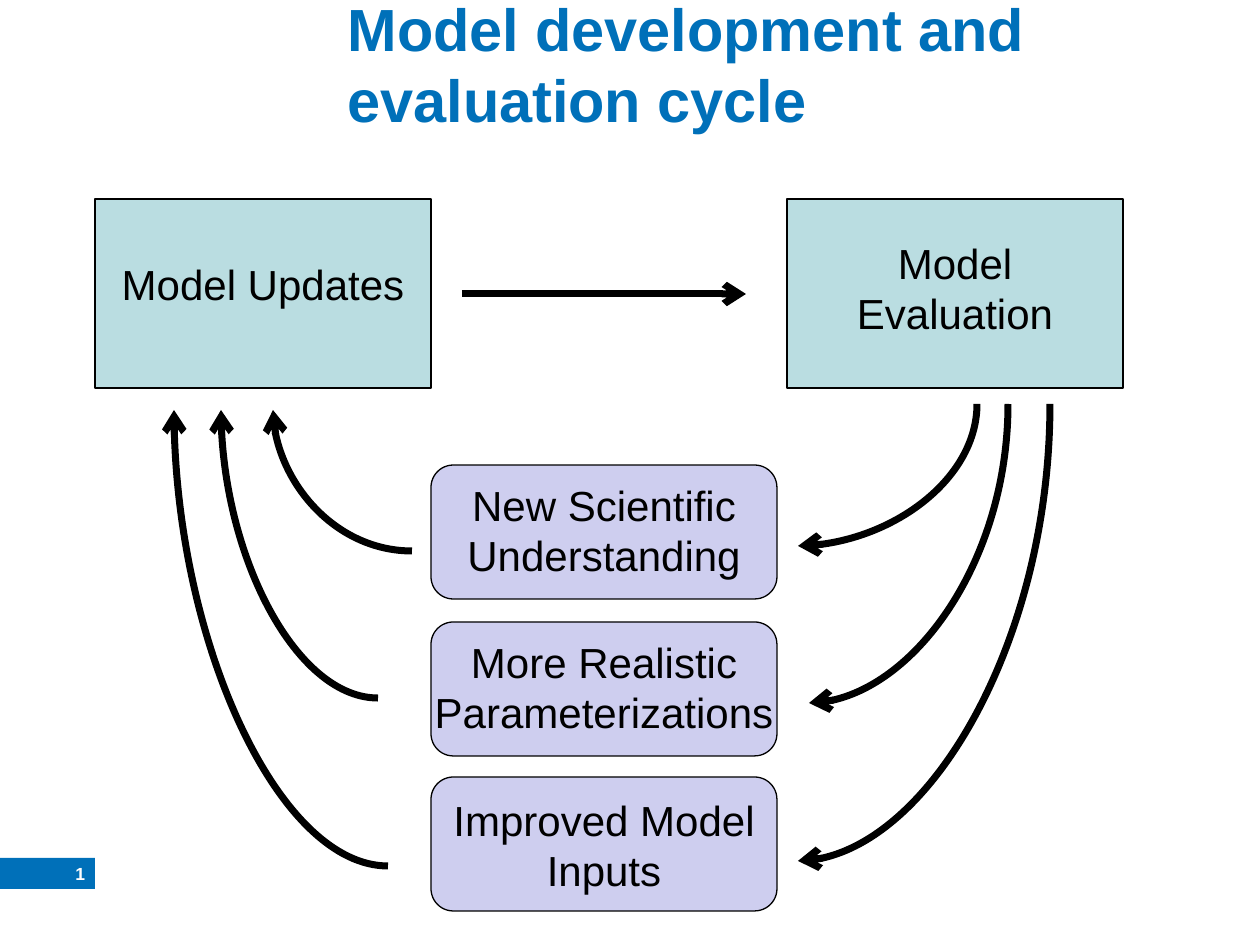
from lxml import etree
from pptx import Presentation
from pptx.dml.color import RGBColor
from pptx.enum.shapes import MSO_CONNECTOR, MSO_SHAPE
from pptx.enum.text import MSO_ANCHOR, MSO_AUTO_SIZE, PP_ALIGN
from pptx.oxml.ns import qn
from pptx.util import Emu, Pt

PX = 914400 // 126
TITLE_ONLY = 5
PROCESS = MSO_SHAPE.FLOWCHART_PROCESS
ROUNDED = MSO_SHAPE.FLOWCHART_ALTERNATE_PROCESS
COLORS = {"blue": "0070B9", "teal": "BADDE1", "lilac": "CECEEF",
          "black": "000000", "white": "FFFFFF"}

TITLE = "Model development and evaluation cycle"
PAGE_NUMBER = "1"

STAGE_SIZE, STAGE_TOP = (336, 189), 199
FINDING_SIZE, FINDING_LEFT = (346, 134), 431
# text, left, label top, label height
STAGES = [("Model Updates", 95, 252, 63), ("Model Evaluation", 787, 231, 115)]
# text, top, label top, label overhang on each side
FINDINGS = [("New Scientific Understanding", 465, 473, 0),
            ("More Realistic Parameterizations", 622, 630, 11),
            ("Improved Model Inputs", 777, 788, 0)]
FINDING_LABEL_HEIGHT = 115

STRAIGHT_ARROW = (462, 294, 746, 294)
OUT_TOP, BACK_TOP = 404, 410
# from evaluation down to each finding: start x, end x, end y
OUT_ARROWS = [(977, 798, 546), (1008, 809, 703), (1050, 798, 861)]
# from each finding up to the updates: start x, start y, end x
BACK_ARROWS = [(412, 551, 273), (378, 698, 221), (388, 866, 174)]


def px(*values):
    return [Emu(round(value * PX)) for value in values]


def color(name):
    return RGBColor.from_string(COLORS[name])


def set_text(shape, text, size, color_name, align, bold=False):
    frame = shape.text_frame
    frame.word_wrap = True
    frame.text = text
    paragraph = frame.paragraphs[0]
    paragraph.alignment = align
    font = paragraph.font
    font.name, font.size, font.bold = "Arial", Pt(size), bold
    font.color.rgb = color(color_name)
    return frame


def add_box(shapes, kind, box, fill):
    shape = shapes.add_shape(kind, *px(*box))
    shape.shadow.inherit = False
    shape.fill.solid()
    shape.fill.fore_color.rgb = color(fill)
    shape.line.color.rgb = color("black")
    shape.line.width = Pt(0.75)
    return shape


def add_labelled_box(slide, kind, box, fill, text, label_box):
    group = slide.shapes.add_group_shape()
    add_box(group.shapes, kind, box, fill)
    label = group.shapes.add_textbox(*px(*label_box))
    set_text(label, text, 24, "black", PP_ALIGN.CENTER)


def add_arrow(slide, kind, ends):
    connector = slide.shapes.add_connector(kind, *px(*ends))
    connector.line.color.rgb = color("black")
    connector.line.width = Pt(4)
    properties = connector._element.spPr
    line = properties.find(qn("a:ln"))
    etree.SubElement(line, qn("a:tailEnd"), type="arrow")
    etree.SubElement(properties, qn("a:effectLst"))
    return connector


def add_arc(slide, left, top, right, bottom, degrees):
    """Quarter-turn arrow filling the given bounds, turned clockwise."""
    half_width, half_height = (right - left) / 2, (bottom - top) / 2
    center_x, center_y = left + half_width, top + half_height
    if degrees == 90:
        half_width, half_height = half_height, half_width
    ends = (center_x - half_width, center_y - half_height,
            center_x + half_width, center_y + half_height)
    properties = add_arrow(slide, MSO_CONNECTOR.CURVE, ends)._element.spPr
    properties.find(qn("a:prstGeom")).set("prst", "curvedConnector2")
    properties.find(qn("a:xfrm")).set("rot", str(degrees * 60000))


def main():
    presentation = Presentation()
    presentation.slide_width, presentation.slide_height = px(1260, 945)
    slide = presentation.slides.add_slide(presentation.slide_layouts[TITLE_ONLY])

    title = slide.shapes.title
    title.left, title.top, title.width, title.height = px(335, 42, 862, 42)
    frame = set_text(title, TITLE, 34, "blue", PP_ALIGN.LEFT, bold=True)
    frame.auto_size = MSO_AUTO_SIZE.NONE
    frame.vertical_anchor = MSO_ANCHOR.MIDDLE

    bar = add_box(slide.shapes, MSO_SHAPE.RECTANGLE, (0, 858, 95, 31), "blue")
    bar.line.fill.background()
    frame = set_text(bar, PAGE_NUMBER, 10, "white", PP_ALIGN.RIGHT, bold=True)
    frame.vertical_anchor = MSO_ANCHOR.MIDDLE
    frame.margin_left = frame.margin_top = frame.margin_bottom = 0
    frame.margin_right = px(10)[0]

    for text, left, label_top, label_height in STAGES:
        add_labelled_box(slide, PROCESS, (left, STAGE_TOP, *STAGE_SIZE), "teal", text,
                         (left, label_top, STAGE_SIZE[0], label_height))
    for text, top, label_top, overhang in FINDINGS:
        label_box = (FINDING_LEFT - overhang, label_top,
                     FINDING_SIZE[0] + 2 * overhang, FINDING_LABEL_HEIGHT)
        add_labelled_box(slide, ROUNDED, (FINDING_LEFT, top, *FINDING_SIZE), "lilac",
                         text, label_box)

    add_arrow(slide, MSO_CONNECTOR.STRAIGHT, STRAIGHT_ARROW)
    for start_x, end_x, end_y in OUT_ARROWS:
        add_arc(slide, end_x, OUT_TOP, start_x, end_y, 90)
    for start_x, start_y, end_x in BACK_ARROWS:
        add_arc(slide, end_x, BACK_TOP, start_x, start_y, 180)

    presentation.save("out.pptx")


if __name__ == "__main__":
    main()
